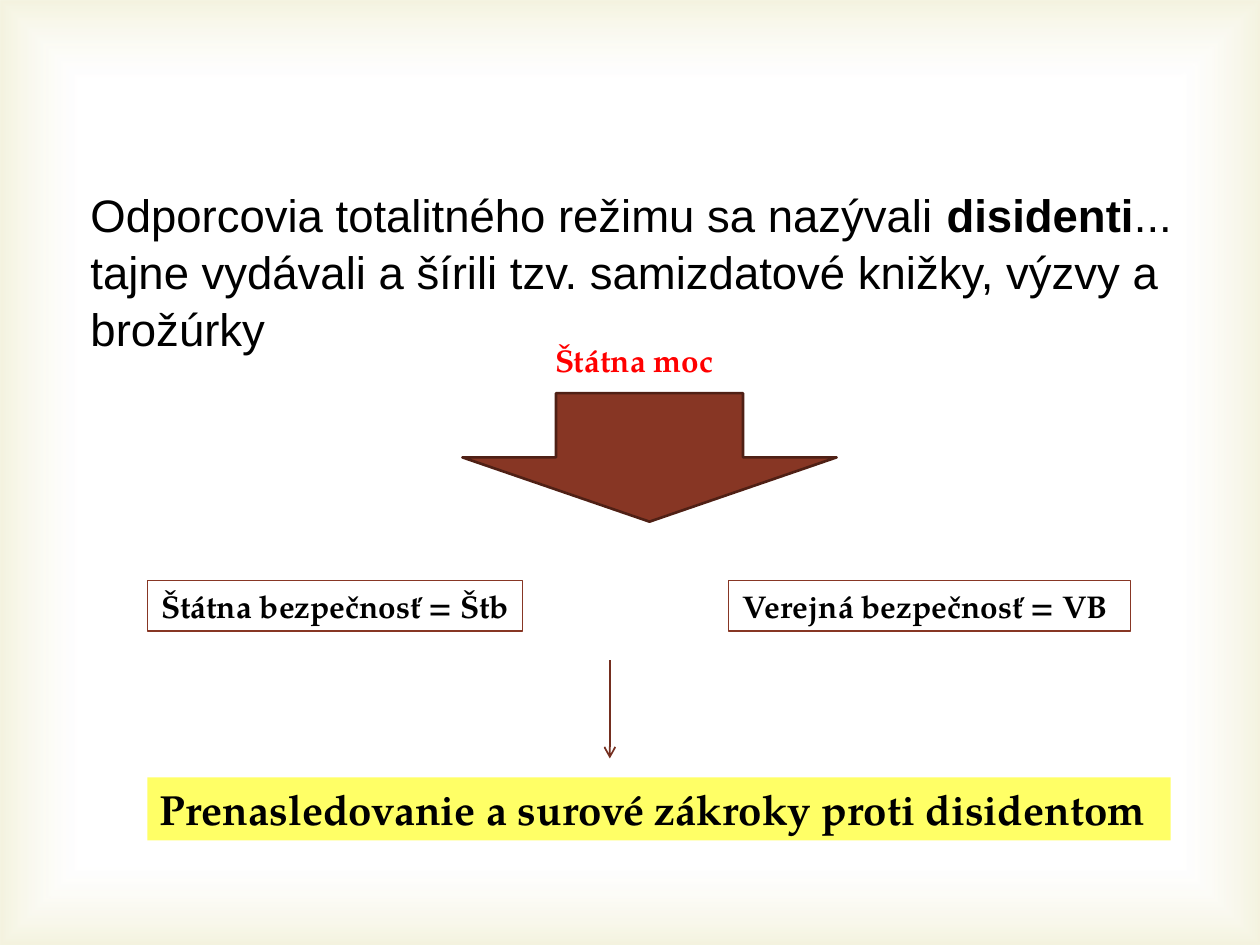
from pptx import Presentation
from pptx.dml.color import RGBColor
from pptx.enum.shapes import MSO_CONNECTOR as Connector, MSO_SHAPE as Shape
from pptx.enum.text import MSO_ANCHOR as Anchor, PP_ALIGN as Align
from pptx.oxml import parse_xml
from pptx.oxml.ns import nsdecls, qn
from pptx.util import Inches, Pt
from lxml.etree import SubElement

BLACK = RGBColor(0x00, 0x00, 0x00)
RED = RGBColor(0xFF, 0x00, 0x00)
BROWN = RGBColor(0x87, 0x36, 0x24)
DARK_BROWN = RGBColor(0x4F, 0x20, 0x15)
ARROW_BROWN = RGBColor(0x74, 0x2E, 0x1F)
YELLOW = RGBColor(0xFF, 0xFF, 0x66)
WHITE = RGBColor(0xFF, 0xFF, 0xFF)
CREAM = RGBColor(0xD1, 0xCA, 0x75)


class SlideBuilder:
    serif = {"name": "TeX Gyre Pagella", "size": Pt(18), "bold": True}
    sans = {"name": "Arial", "size": Pt(26), "bold": False}

    def __init__(self, page):
        self.page = page

    def shape(self, kind, place, fill=None, line=None, width=0.75):
        box = self.page.shapes.add_shape(kind, *map(Inches, place))
        box.shadow.inherit = False
        if fill is None:
            box.fill.background()
        else:
            box.fill.solid()
            box.fill.fore_color.rgb = fill
        if line is None:
            box.line.fill.background()
        else:
            box.line.color.rgb = line
            box.line.width = Pt(width)
        return box

    def frame(self, place, stops):
        box = self.shape(Shape.RECTANGLE, place)
        marks = "".join(
            f'<a:gs pos="{position * 1000}"><a:srgbClr val="{color}">'
            f'<a:alpha val="{alpha * 1000}"/></a:srgbClr></a:gs>'
            for position, color, alpha in stops
        )
        center = " ".join(f'{side}="50000"' for side in "ltrb")
        gradient = parse_xml(
            f'<a:gradFill {nsdecls("a")} rotWithShape="1"><a:gsLst>{marks}</a:gsLst>'
            f'<a:path path="rect"><a:fillToRect {center}/></a:path></a:gradFill>'
        )
        properties = box.element.spPr
        properties.replace(properties.find(qn("a:noFill")), gradient)

    def fill_text(self, box, lines, style, color=BLACK, align=Align.LEFT, spacing=1.0):
        frame = box.text_frame
        frame.word_wrap = True
        frame.vertical_anchor = Anchor.TOP
        for index, spans in enumerate(lines):
            para = frame.add_paragraph() if index else frame.paragraphs[0]
            para.alignment = align
            para.line_spacing = spacing
            for text, changes in spans:
                span = para.add_run()
                span.text = text
                for name, value in {**style, **changes}.items():
                    setattr(span.font, name, value)
                span.font.color.rgb = color

    def text(self, place, lines, style, **options):
        box = self.page.shapes.add_textbox(*map(Inches, place))
        self.fill_text(box, lines, style, **options)

    def label(self, place, text, size=18, align=Align.CENTER, **look):
        box = self.shape(Shape.RECTANGLE, place, **look)
        self.fill_text(box, [[(text, {"size": Pt(size)})]], self.serif, align=align)

    def arrow(self, start, end, color, width):
        line = self.page.shapes.add_connector(
            Connector.STRAIGHT, *map(Inches, (*start, *end))
        )
        line.line.color.rgb = color
        line.line.width = Pt(width)
        properties = line.element.spPr
        SubElement(properties.find(qn("a:ln")), qn("a:tailEnd"), type="arrow")
        SubElement(properties, qn("a:effectLst"))


def main():
    deck = Presentation()
    deck.slide_width, deck.slide_height = Inches(10), Inches(7.5)
    builder = SlideBuilder(deck.slides.add_slide(deck.slide_layouts[6]))

    builder.frame((0, 0, 10, 7.5), [(83, WHITE, 11), (100, CREAM, 23)])
    dissidents = [
        [
            ("Odporcovia totalitného režimu sa nazývali ", {}),
            ("disidenti", {"bold": True}),
            ("...", {}),
        ],
        [("tajne vydávali a šírili tzv. samizdatové knižky, výzvy a", {})],
        [("brožúrky", {})],
    ]
    builder.text((0.62, 1.41, 8.87, 1.41), dissidents, builder.sans, spacing=1.05)
    builder.shape(Shape.DOWN_ARROW, (3.67, 3.12, 2.97, 1.02), BROWN, DARK_BROWN, 1.5)
    for left, width, text in (
        (1.17, 2.98, "Štátna bezpečnosť = Štb"),
        (5.78, 3.19, "Verejná bezpečnosť = VB "),
    ):
        builder.label((left, 4.61, width, 0.4), text, line=BROWN)
    builder.arrow((4.84, 5.24), (4.84, 6.02), ARROW_BROWN, 1)
    builder.label(
        (1.17, 6.17, 8.12, 0.5),
        "Prenasledovanie a surové zákroky proti disidentom",
        size=24,
        align=Align.LEFT,
        fill=YELLOW,
    )
    builder.text(
        (4.3, 2.66, 1.53, 0.4),
        [[("Štátna moc ", {})]],
        builder.serif,
        color=RED,
        align=Align.CENTER,
    )
    deck.save("out.pptx")


if __name__ == "__main__":
    main()
